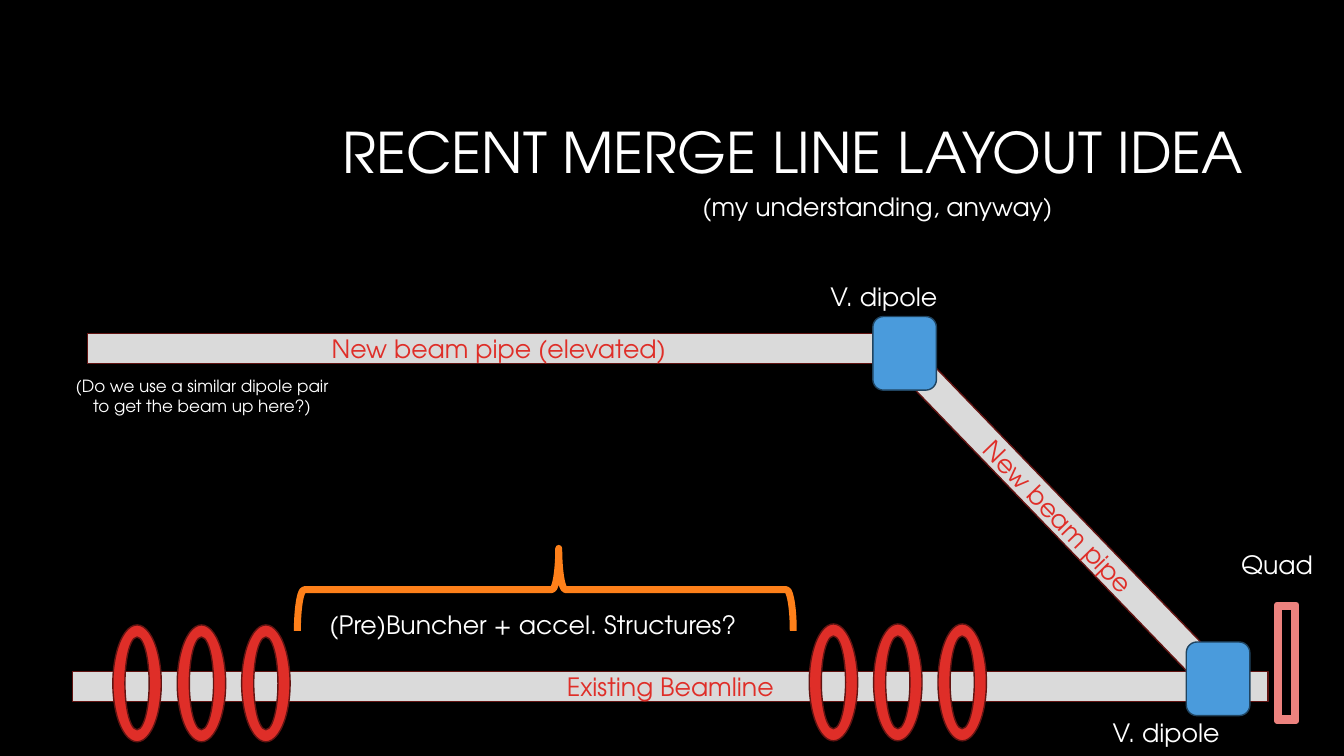
import pptx
import pptx.util
import pptx.dml.color
import pptx.enum.shapes
import pptx.enum.text

Pt = pptx.util.Pt
SHAPE = pptx.enum.shapes.MSO_SHAPE
ALIGN = pptx.enum.text.PP_ALIGN
MIDDLE = pptx.enum.text.MSO_ANCHOR.MIDDLE
FIT_SHAPE = pptx.enum.text.MSO_AUTO_SIZE.SHAPE_TO_FIT_TEXT

FONT = "TeX Gyre Adventor"
COLORS = {
    "background": "000000",
    "text": "FFFFFF",
    "pipe": "DADADA",
    "magnet": "DF2E28",
    "magnet edge": "621412",
    "dipole": "4A9BDC",
    "dipole edge": "204460",
    "brace": "FE801A",
    "quad edge": "EC827E",
}


def color(name):
    return pptx.dml.color.RGBColor.from_string(COLORS[name])


def write(frame, text, size, color_name, align):
    frame.text = text
    paragraph = frame.paragraphs[0]
    paragraph.alignment = align
    font = paragraph.runs[0].font
    font.name = FONT
    font.size = Pt(size)
    font.color.rgb = color(color_name)


def add_title(slide, text, left, top, width, height):
    title = slide.shapes.title
    title.left, title.top = Pt(left), Pt(top)
    title.width, title.height = Pt(width), Pt(height)
    write(title.text_frame, text, 40, "text", ALIGN.RIGHT)
    title.text_frame.vertical_anchor = MIDDLE
    title.text_frame.paragraphs[0].line_spacing = 0.9


def add_label(slide, text, left, top, width, height=28.8, size=18, align=ALIGN.LEFT):
    label = slide.shapes.add_textbox(Pt(left), Pt(top), Pt(width), Pt(height))
    label.text_frame.word_wrap = True
    label.text_frame.auto_size = FIT_SHAPE
    write(label.text_frame, text, size, "text", align)


def add_part(slide, kind, left, top, width, height, fill, edge, weight=1):
    part = slide.shapes.add_shape(kind, Pt(left), Pt(top), Pt(width), Pt(height))
    part.shadow.inherit = False
    if fill:
        part.fill.solid()
        part.fill.fore_color.rgb = color(fill)
    else:
        part.fill.background()
    part.line.color.rgb = color(edge)
    part.line.width = Pt(weight)
    return part


def add_pipe(slide, text, left, top, length, angle=0):
    pipe = add_part(slide, SHAPE.RECTANGLE, left, top, length, 21.6, "pipe", "magnet edge")
    pipe.rotation = angle
    pipe.text_frame.vertical_anchor = MIDDLE
    write(pipe.text_frame, text, 18, "magnet", ALIGN.CENTER)


def add_solenoids(slide, left, top):
    for index in range(3):
        add_part(slide, SHAPE.DONUT, left + 46 * index, top, 34.6, 83.5,
                 "magnet", "magnet edge")


def add_brace(slide, left, top, width, height):
    brace = add_part(slide, SHAPE.LEFT_BRACE, left, top, width, height, None, "brace", 5)
    brace.rotation = 90
    brace.adjustments[0] = 0.083
    brace.adjustments[1] = 0.473


def add_dipole(slide, left, top):
    add_part(slide, SHAPE.ROUNDED_RECTANGLE, left, top, 45.4, 52.6, "dipole", "dipole edge")


def main():
    deck = pptx.Presentation()
    deck.slide_width, deck.slide_height = Pt(960), Pt(540)
    slide = deck.slides.add_slide(deck.slide_layouts[5])
    slide.background.fill.solid()
    slide.background.fill.fore_color.rgb = color("background")

    # Heading
    add_title(slide, "RECENT MERGE LINE LAYOUT IDEA ", 228.2, 60.5, 678.2, 101.5)
    add_label(slide, "(my understanding, anyway)", 362.2, 133.2, 529.2, align=ALIGN.CENTER)

    # Horizontal pipes
    add_pipe(slide, "Existing Beamline", 51.8, 479.5, 854)
    add_pipe(slide, "New beam pipe (elevated)", 62.6, 238.3, 587.5)

    # Solenoids around the accelerating section
    add_solenoids(slide, 80.6, 446.4)
    add_brace(slide, 360, 244.1, 59, 354.2)
    add_label(slide, "(Pre)Buncher + accel. Structures?", 228.2, 432, 318.2)
    add_solenoids(slide, 578, 445.7)

    # Merge line between the two dipoles
    add_pipe(slide, "New beam pipe ", 601.2, 360, 313.2, angle=46)
    add_dipole(slide, 623.5, 226.1)
    add_dipole(slide, 847.4, 458.6)
    add_label(slide, "(Do we use a similar dipole pair to get the beam up here?)",
              41.8, 265, 205.2, 36, size=12, align=ALIGN.CENTER)
    add_label(slide, "V. dipole", 586.1, 197.3, 109.4)
    add_label(slide, "V. dipole", 787.7, 509, 109.4)

    # Quad
    add_part(slide, SHAPE.FRAME, 912.2, 432, 13.7, 82.8, "magnet", "quad edge", 4.25)
    add_label(slide, "Quad", 857.5, 388.8, 109.4, align=ALIGN.CENTER)

    deck.save("out.pptx")


if __name__ == "__main__":
    main()
